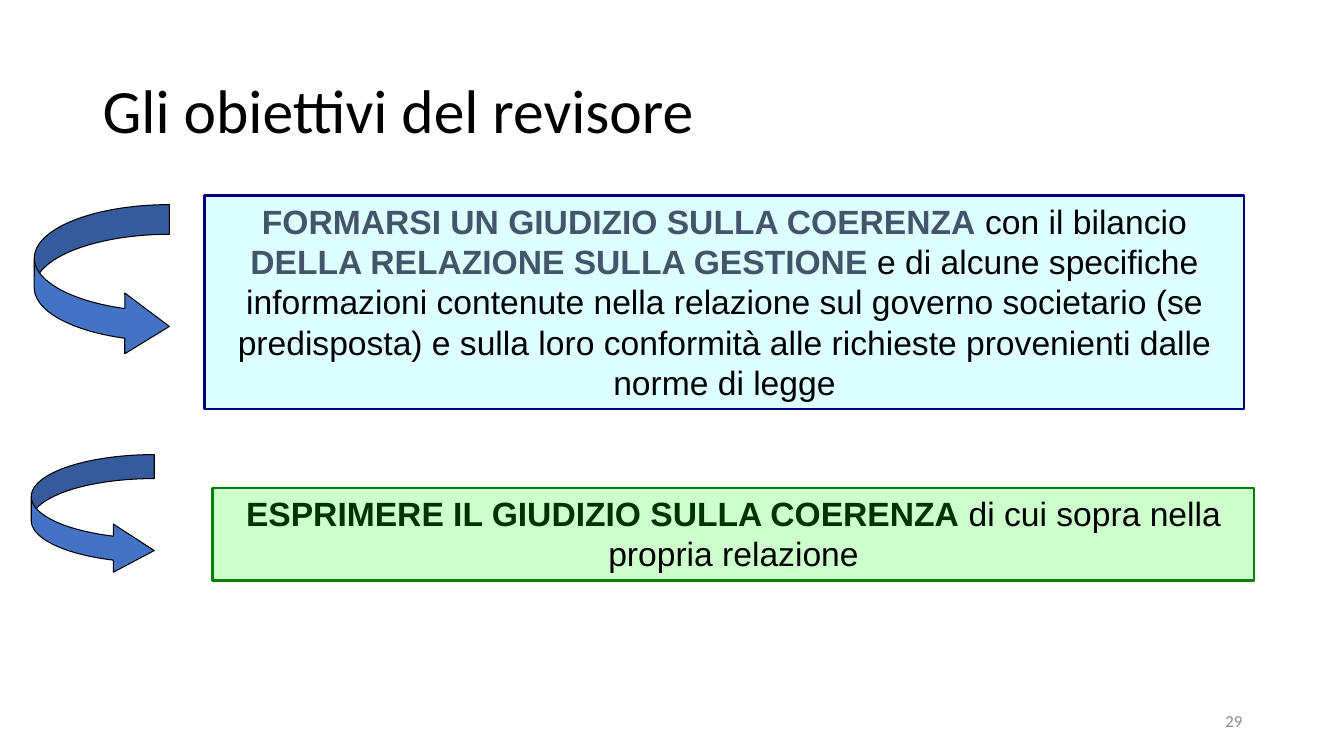
import dataclasses

import lxml.etree
import pptx
import pptx.dml.color
import pptx.enum.shapes
import pptx.enum.text
import pptx.oxml.ns
import pptx.util

Inches = pptx.util.Inches
Align = pptx.enum.text.PP_ALIGN
Anchor = pptx.enum.text.MSO_ANCHOR
Shape = pptx.enum.shapes.MSO_SHAPE


@dataclasses.dataclass(frozen=True)
class Theme:
    heading_font: str = "Calibri"
    body_font: str = "Arial"
    title_size: int = 44
    body_size: int = 24
    number_size: int = 12
    black: str = "000000"
    gray: str = "8C8C8C"
    slate: str = "44546A"
    dark_green: str = "003300"
    green: str = "008000"
    light_green: str = "CCFFCC"
    navy: str = "000080"
    light_cyan: str = "CCFFFF"
    arrow_blue: str = "4472C4"
    box_line: float = 1.75
    arrow_line: float = 0.75


def rgb(color):
    return pptx.dml.color.RGBColor.from_string(color)


def add_run(paragraph, text, *, font, size, color, bold=False):
    run = paragraph.add_run()
    run.text = text
    run.font.name = font
    run.font.size = pptx.util.Pt(size)
    run.font.bold = bold
    run.font.color.rgb = rgb(color)


class SlideBuilder:
    def __init__(self, slide, theme):
        self.slide = slide
        self.theme = theme

    def label(self, bounds, text, *, size, color, align=Align.LEFT, spacing=1.0):
        frame = self.slide.shapes.add_textbox(*map(Inches, bounds)).text_frame
        frame.word_wrap = True
        frame.vertical_anchor = Anchor.MIDDLE
        paragraph = frame.paragraphs[0]
        paragraph.alignment = align
        paragraph.line_spacing = spacing
        add_run(paragraph, text, font=self.theme.heading_font, size=size, color=color)

    def shape(self, kind, bounds, *, fill, line, width, opacity=100):
        shape = self.slide.shapes.add_shape(kind, *map(Inches, bounds))
        shape.shadow.inherit = False
        shape.fill.solid()
        shape.fill.fore_color.rgb = rgb(fill)
        shape.line.color.rgb = rgb(line)
        shape.line.width = pptx.util.Pt(width)
        if opacity < 100:
            qualified = pptx.oxml.ns.qn
            color = shape.fill._xPr.find(qualified("a:solidFill"))[0]
            alpha = lxml.etree.SubElement(color, qualified("a:alpha"))
            alpha.set("val", str(opacity * 1000))
        return shape

    def objective(self, bounds, pieces, *, emphasis, fill, line, opacity=100):
        box = self.shape(Shape.RECTANGLE, bounds, fill=fill, line=line,
                         width=self.theme.box_line, opacity=opacity)
        frame = box.text_frame
        frame.word_wrap = True
        frame.vertical_anchor = Anchor.TOP
        paragraph = frame.paragraphs[0]
        paragraph.alignment = Align.CENTER
        for text, strong in pieces:
            add_run(paragraph, text, font=self.theme.body_font,
                    size=self.theme.body_size, bold=strong,
                    color=emphasis if strong else self.theme.black)

    def arrow(self, bounds, adjustments):
        arrow = self.shape(Shape.CURVED_RIGHT_ARROW, bounds, fill=self.theme.arrow_blue,
                           line=self.theme.black, width=self.theme.arrow_line)
        for index, value in enumerate(adjustments):
            arrow.adjustments[index] = value


def main():
    presentation = pptx.Presentation()
    presentation.slide_width = Inches(13.33)
    presentation.slide_height = Inches(7.5)
    slide = presentation.slides.add_slide(presentation.slide_layouts[6])
    theme = Theme()
    builder = SlideBuilder(slide, theme)

    builder.label((9.42, 6.95, 3, 0.4), "29", size=theme.number_size,
                  color=theme.gray, align=Align.RIGHT)
    builder.label((0.92, 0.4, 11.5, 1.45), "Gli obiettivi del revisore",
                  size=theme.title_size, color=theme.black, spacing=0.9)
    builder.objective(
        (2.03, 1.94, 10.31, 2.12),
        [
            ("FORMARSI UN GIUDIZIO SULLA COERENZA", True),
            (" con il bilancio ", False),
            ("DELLA RELAZIONE SULLA GESTIONE", True),
            (" e di alcune specifiche informazioni contenute nella relazione sul "
             "governo societario (se predisposta) e sulla loro conformità alle "
             "richieste provenienti dalle norme di legge", False),
        ],
        emphasis=theme.slate, fill=theme.light_cyan, line=theme.navy, opacity=63)
    builder.arrow((0.34, 2.03, 1.34, 1.51), (0.22, 0.45, 0.33))
    builder.objective(
        (2.11, 4.84, 10.33, 0.92),
        [
            ("ESPRIMERE IL GIUDIZIO SULLA COERENZA", True),
            (" di cui sopra nella propria relazione", False),
        ],
        emphasis=theme.dark_green, fill=theme.light_green, line=theme.green)
    builder.arrow((0.31, 4.51, 1.22, 1.19), (0.2, 0.4, 0.34))

    presentation.save("out.pptx")


if __name__ == "__main__":
    main()
